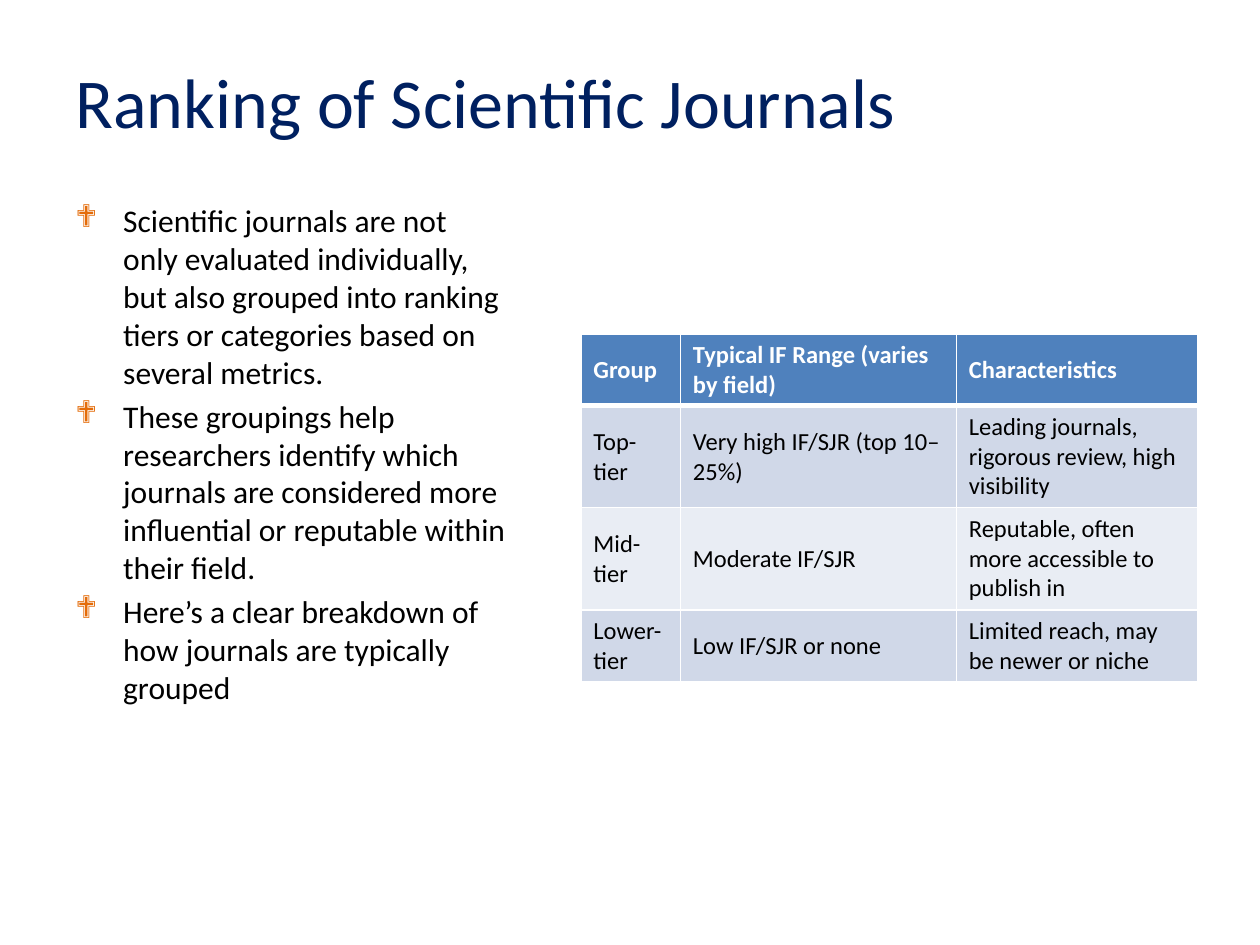
"""Build a slide on journal ranking tiers with bullets and a table."""
import pptx
import pptx.dml.color
import pptx.enum.text
import pptx.oxml
import pptx.oxml.ns
import pptx.util

TITLE = "Ranking of Scientific Journals"
POINTS = [
    "Scientific journals are not only evaluated individually, but also grouped into ranking tiers or categories based on several metrics.",
    "These groupings help researchers identify which journals are considered more influential or reputable within their field.",
    "Here’s a clear breakdown of how journals are typically grouped",
]
ROWS = [
    ("Group", "Typical IF Range (varies by field)", "Characteristics"),
    ("Top-tier", "Very high IF/SJR (top 10–25%)", "Leading journals, rigorous review, high visibility"),
    ("Mid-tier", "Moderate IF/SJR", "Reputable, often more accessible to publish in"),
    ("Lower-tier", "Low IF/SJR or none", "Limited reach, may be newer or niche"),
]
COLORS = {
    "title": "002060", "text": "000000", "bullet": "E46C0A", "white": "FFFFFF",
    "header": "4F81BD", "odd": "D0D8E8", "even": "E9EDF4",
}
FONT = "Calibri"
COLUMN_WIDTHS = [0.79, 2.19, 1.92]
ROW_HEIGHTS = [0.57, 0.81, 0.81, 0.57]
MARGIN, TABLE_LEFT, TABLE_TOP = 0.5, 4.61, 2.65
INDENT = pptx.util.Inches(0.38)
MIDDLE = pptx.enum.text.MSO_ANCHOR.MIDDLE


def place(shape, *bounds):
    for name, value in zip(("left", "top", "width", "height"), bounds):
        setattr(shape, name, pptx.util.Inches(value))


def style(para, color, **formats):
    for name, value in {"name": FONT, **formats}.items():
        setattr(para.font, name, value)
    para.font.color.rgb = pptx.dml.color.RGBColor.from_string(COLORS[color])


def element(markup):
    tag, rest = markup.split(" ", 1)
    return pptx.oxml.parse_xml(f"<a:{tag} {pptx.oxml.ns.nsdecls('a')} {rest}")


def add_bullet(para):
    properties = para._p.get_or_add_pPr()
    properties.set("marL", str(INDENT))
    properties.set("indent", str(-INDENT))
    properties.append(element(f'buClr ><a:srgbClr val="{COLORS["bullet"]}"/></a:buClr>'))
    properties.append(element('buFont typeface="Wingdings"/>'))
    properties.append(element('buChar char="❖"/>'))


def add_borders(cell, bottom, top):
    properties = cell._tc.get_or_add_tcPr()
    for side, points in (("L", 1), ("R", 1), ("T", top), ("B", bottom)):
        properties.append(element(
            f'ln{side} w="{pptx.util.Pt(points)}"><a:solidFill>'
            f'<a:srgbClr val="{COLORS["white"]}"/></a:solidFill></a:ln{side}>'))


def add_title(page):
    title = page.shapes.title
    place(title, MARGIN, 0.3, 9, 1)
    title.text_frame.text = TITLE
    title.text_frame.vertical_anchor = MIDDLE
    para = title.text_frame.paragraphs[0]
    para.alignment = pptx.enum.text.PP_ALIGN.LEFT
    style(para, "title", size=pptx.util.Pt(40))


def add_points(page):
    box = page.shapes.add_textbox(0, 0, 0, 0)
    place(box, MARGIN, 1.55, 3.63, 5.67)
    box.text_frame.word_wrap = True
    for index, point in enumerate(POINTS):
        para = box.text_frame.add_paragraph() if index else box.text_frame.paragraphs[0]
        para.text = point
        para.space_before = pptx.util.Pt(3.6 if index else 0)
        add_bullet(para)
        style(para, "text", size=pptx.util.Pt(18))


def add_tiers(page):
    frame = page.shapes.add_table(len(ROWS), len(COLUMN_WIDTHS), 0, 0, 0, 0)
    place(frame, TABLE_LEFT, TABLE_TOP, sum(COLUMN_WIDTHS), sum(ROW_HEIGHTS))
    table = frame.table
    for column, width in zip(table.columns, COLUMN_WIDTHS):
        column.width = pptx.util.Inches(width)
    for index, (row, height, texts) in enumerate(zip(table.rows, ROW_HEIGHTS, ROWS)):
        row.height = pptx.util.Inches(height)
        header = index == 0
        fill = "header" if header else ("odd" if index % 2 else "even")
        for cell, text in zip(row.cells, texts):
            cell.text = text
            cell.vertical_anchor = MIDDLE
            add_borders(cell, bottom=3 if header else 1, top=3 if index == 1 else 1)
            cell.fill.solid()
            cell.fill.fore_color.rgb = pptx.dml.color.RGBColor.from_string(COLORS[fill])
            style(cell.text_frame.paragraphs[0], "white" if header else "text",
                  size=pptx.util.Pt(14), bold=header)


def main():
    deck = pptx.Presentation()
    deck.slide_width, deck.slide_height = pptx.util.Inches(10), pptx.util.Inches(7.5)
    page = deck.slides.add_slide(deck.slide_layouts.get_by_name("Title Only"))
    add_title(page)
    add_points(page)
    add_tiers(page)
    deck.save("out.pptx")


if __name__ == "__main__":
    main()
